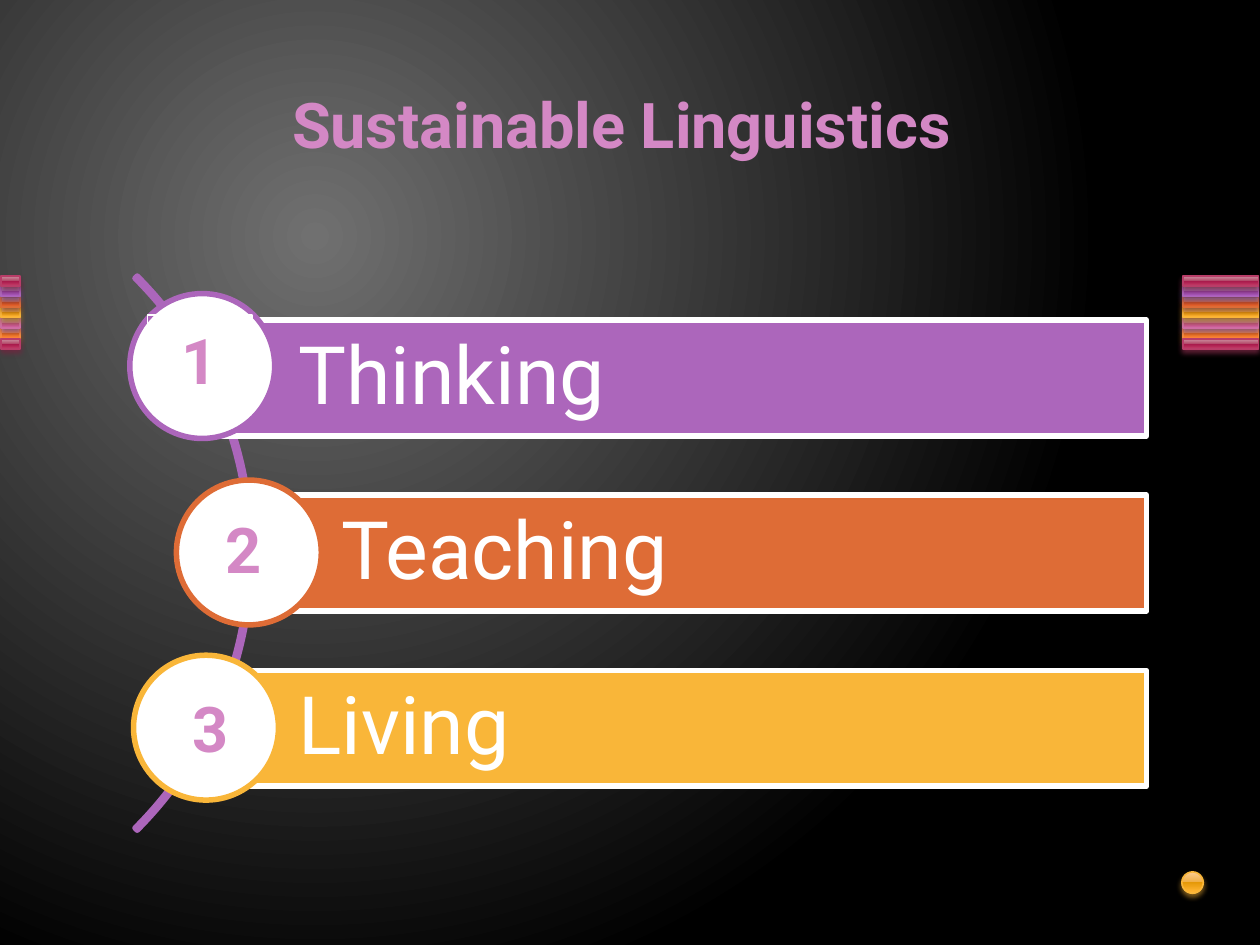
import dataclasses

import pptx
import pptx.dml.color
import pptx.enum.shapes
import pptx.enum.text
import pptx.oxml
import pptx.oxml.ns
import pptx.util
from lxml import etree

Inches = pptx.util.Inches
Pt = pptx.util.Pt
RGBColor = pptx.dml.color.RGBColor
Shape = pptx.enum.shapes.MSO_SHAPE
Anchor = pptx.enum.text.MSO_ANCHOR
Align = pptx.enum.text.PP_ALIGN
qn = pptx.oxml.ns.qn


@dataclasses.dataclass(frozen=True)
class Theme:
    font: str = "Roboto"
    heading_size: int = 36
    label_size: int = 46
    heading: str = "D488C5"
    white: str = "FFFFFF"
    purple: str = "AC66BB"
    orange: str = "DE6C36"
    yellow: str = "F9B639"
    backdrop: tuple = ("707070", "000000")
    outline: float = 3.15
    thin: float = 0.75
    gloss_line: float = 0.9
    gloss_stops: tuple = (0, 49, 49, 92, 100)


@dataclasses.dataclass(frozen=True)
class Gloss:
    line: str
    shadow: str
    shades: tuple


CRIMSON = Gloss("B83D68", "722640", ("CE94A2", "B34869", "A61749", "C13764", "CA5D7C"))
PURPLE = Gloss("AC66BB", "6A3F73", ("C6A2D0", "A666B4", "8F3EA1", "AD5DBF", "BA76CA"))
ORANGE = Gloss("DE6C36", "894321", ("E7A493", "D66B42", "CC4809", "E9642C", "F07B55"))
YELLOW = Gloss("F9B639", "9A7023", ("FBCC93", "EFAE43", "E59807", "FFB432", "FFBE5F"))
PINK = Gloss("CF6DA4", "804365", ("DDA4C1", "C66B9D", "B34181", "D361A0", "DC79AE"))
APRICOT = Gloss("FA8D3D", "9A5726", ("FBB494", "F08745", "E5670B", "FF8736", "FF9961"))
STRIPES = (CRIMSON, PURPLE, ORANGE, YELLOW, PINK, APRICOT, CRIMSON)


class SlideBuilder:
    """Draws the elements of one slide in a shared style."""

    def __init__(self, slide, theme):
        self.slide = slide
        self.theme = theme

    def set_stops(self, owner, stops):
        gradient = owner.find(".//" + qn("a:gradFill"))
        for child in list(gradient):
            gradient.remove(child)
        stop_list = etree.SubElement(gradient, qn("a:gsLst"))
        for position, color in stops:
            stop = etree.SubElement(stop_list, qn("a:gs"), pos=str(position * 1000))
            etree.SubElement(stop, qn("a:srgbClr"), val=color)
        return gradient

    def backdrop(self):
        self.slide.background.fill.gradient()
        gradient = self.set_stops(self.slide.element, zip((0, 100), self.theme.backdrop))
        circle = etree.SubElement(gradient, qn("a:path"), {"path": "circle"})
        etree.SubElement(circle, qn("a:fillToRect"), l="50000", t="50000", r="100000", b="100000")

    def figure(self, kind, box, fill, line, width):
        figure = self.slide.shapes.add_shape(kind, *map(Inches, box))
        figure.shadow.inherit = False
        if fill:
            figure.fill.solid()
            figure.fill.fore_color.rgb = RGBColor.from_string(fill)
        else:
            figure.fill.background()
        figure.line.color.rgb = RGBColor.from_string(line)
        figure.line.width = Pt(width)
        return figure

    def glossy(self, kind, box, gloss):
        figure = self.figure(kind, box, None, gloss.line, self.theme.gloss_line)
        figure.fill.gradient()
        properties = figure.element.spPr
        gradient = self.set_stops(properties, zip(self.theme.gloss_stops, gloss.shades))
        etree.SubElement(gradient, qn("a:lin"), ang="5400000", scaled="0")
        shadow = etree.SubElement(
            properties.find(qn("a:effectLst")), qn("a:outerShdw"),
            blurRad=str(int(Pt(3.1))), dist=str(int(Pt(2))), dir="5400000", rotWithShape="0",
        )
        color = etree.SubElement(shadow, qn("a:srgbClr"), val=gloss.shadow)
        etree.SubElement(color, qn("a:alpha"), val="83000")

    def stripes(self, left, width):
        for index in (5, 4, 3, 2, 1, 0, 6):
            self.glossy(Shape.RECTANGLE, (left, 2.19 + index / 12, width, 0.08), STRIPES[index])

    def fill_text(self, frame, text, size, color, bold, align):
        frame.word_wrap = True
        paragraph = frame.paragraphs[0]
        paragraph.text = text
        paragraph.alignment = align
        paragraph.font.name = self.theme.font
        paragraph.font.size = Pt(size)
        paragraph.font.bold = bold
        paragraph.font.color.rgb = RGBColor.from_string(color)
        return paragraph

    def heading(self, frame, text):
        self.fill_text(frame, text, self.theme.heading_size, self.theme.heading, True, Align.CENTER)

    def title(self, text, box):
        title = self.slide.shapes.title
        title.left, title.top, title.width, title.height = map(Inches, box)
        title.text_frame.vertical_anchor = Anchor.BOTTOM
        self.heading(title.text_frame, text)

    def arc(self, box, color):
        arc = self.figure(Shape.BLOCK_ARC, box, None, color, self.theme.outline)
        for index, value in enumerate((189, 27, 0.004)):
            arc.adjustments[index] = value

    def bar(self, text, left, top, color):
        theme = self.theme
        box = (left, top, 9.1 - left, 0.92)
        bar = self.figure(Shape.RECTANGLE, box, color, theme.white, theme.outline)
        frame = bar.text_frame
        frame.vertical_anchor = Anchor.MIDDLE
        frame.margin_left = Inches(0.73)
        frame.margin_top = frame.margin_right = frame.margin_bottom = Inches(0.13)
        label = self.fill_text(frame, text, theme.label_size, theme.white, False, Align.LEFT)
        label.line_spacing = 0.9

    def disc(self, left, top, color):
        theme = self.theme
        self.figure(Shape.OVAL, (left, top, 1.15, 1.15), theme.white, color, theme.outline)

    def number(self, text, left, top, width, outlined):
        box = (left, top, width, 0.71)
        number = self.slide.shapes.add_textbox(*map(Inches, box))
        if outlined:
            number.line.color.rgb = RGBColor.from_string(self.theme.white)
            number.line.width = Pt(self.theme.thin)
        self.heading(number.text_frame, text)


def main():
    presentation = pptx.Presentation()
    presentation.slide_width = Inches(10)
    presentation.slide_height = Inches(7.5)
    theme = Theme()
    slide = presentation.slides.add_slide(presentation.slide_layouts[5])
    builder = SlideBuilder(slide, theme)

    builder.backdrop()
    builder.stripes(0.01, 0.15)
    builder.stripes(9.39, 0.6)
    builder.glossy(Shape.OVAL, (9.38, 6.92, 0.17, 0.17), YELLOW)
    builder.title("Sustainable Linguistics ", (0.58, 0.49, 8.83, 0.84))

    builder.arc((-4.22, 1.28, 6.22, 6.22), theme.purple)
    themes_of_practice = (
        ("Thinking", theme.purple, 1.64, (1.03, 2.33)),
        ("Teaching", theme.orange, 1.98, (1.4, 3.81)),
        ("Living", theme.yellow, 1.64, (1.06, 5.2)),
    )
    for row, (text, color, left, disc_corner) in enumerate(themes_of_practice):
        builder.bar(text, left, 2.54 + row * 1.39, color)
        builder.disc(*disc_corner, color)

    builder.number("1", 1.17, 2.5, 0.83, True)
    builder.number("2", 1.58, 4, 0.71, False)
    builder.number("3", 1.32, 5.42, 0.71, False)
    presentation.save("out.pptx")


if __name__ == "__main__":
    main()
